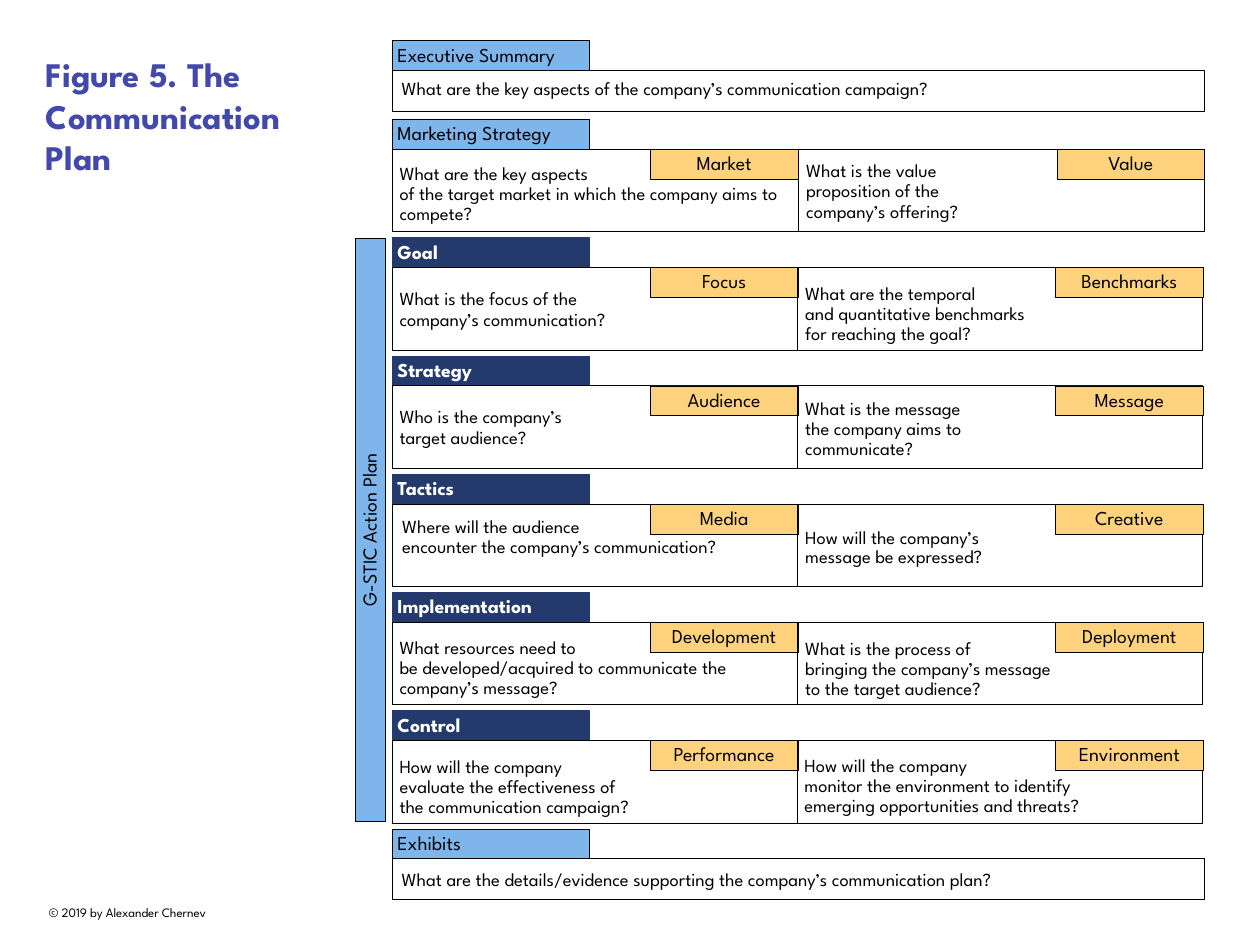
import pptx
import pptx.util
import pptx.dml.color
import pptx.enum.shapes
import pptx.enum.text

Pt = pptx.util.Pt
RGBColor = pptx.dml.color.RGBColor
ALIGN = pptx.enum.text.PP_ALIGN
ANCHOR = pptx.enum.text.MSO_ANCHOR
RECT = pptx.enum.shapes.MSO_SHAPE.RECTANGLE
LINE = pptx.enum.shapes.MSO_CONNECTOR.STRAIGHT

BLACK = RGBColor(0x00, 0x00, 0x00)
WHITE = RGBColor(0xFF, 0xFF, 0xFF)
SKY = RGBColor(0x7E, 0xB5, 0xEA)
NAVY = RGBColor(0x25, 0x3A, 0x6C)
GOLD = RGBColor(0xFF, 0xD3, 0x7D)
VIOLET = RGBColor(0x43, 0x49, 0xAA)

LEFT, MID = 319, 648.2
WIDE, HALF = 659.5, 329.2
HEAD_W, HEAD_H = 160, 24.2
TAG_W = 120
ROW_H, STEP = 67, 96.1
TEXT_W, TEXT_H = 307.5, 58.3

deck = pptx.Presentation()
deck.slide_width, deck.slide_height = Pt(1024), Pt(768)
slide = deck.slides.add_slide(deck.slide_layouts[6])


def write(shape, text, size, color=BLACK, bold=False, align=ALIGN.LEFT,
          anchor=ANCHOR.MIDDLE, inset=0, side=0, space=0.9, before=0):
    frame = shape.text_frame
    frame.word_wrap = True
    frame.vertical_anchor = anchor
    frame.margin_top = frame.margin_bottom = frame.margin_right = Pt(inset)
    frame.margin_left = Pt(inset + side)
    for i, part in enumerate(text.split("\n")):
        para = frame.add_paragraph() if i else frame.paragraphs[0]
        para.alignment = align
        para.line_spacing = space
        para.space_before = Pt(before)
        for j, words in enumerate(part.split("\v")):
            if j:
                para.add_line_break()
            run = para.add_run()
            run.text = words
            run.font.name = "League Spartan"
            run.font.size = Pt(size)
            run.font.bold = bold
            run.font.color.rgb = color


def add_box(x, y, w, h, fill=None, edge=BLACK, weight=0.75):
    box = slide.shapes.add_shape(RECT, Pt(x), Pt(y), Pt(w), Pt(h))
    box.shadow.inherit = False
    if fill is None:
        box.fill.background()
    else:
        box.fill.solid()
        box.fill.fore_color.rgb = fill
    box.line.color.rgb = edge
    box.line.width = Pt(weight)
    return box


title = slide.shapes.add_textbox(Pt(32.4), Pt(33.1), Pt(235.4), Pt(116))
write(title, "Figure 5. The Communication Plan", 28, VIOLET, True,
      anchor=ANCHOR.BOTTOM, inset=5, space=1)

credit = slide.shapes.add_textbox(Pt(19.4), Pt(731.5), Pt(168.5), Pt(20))
write(credit, "© 2019 by Alexander Chernev", 10.5, align=ALIGN.CENTER,
      anchor=ANCHOR.TOP, inset=3.6, space=1)
credit.text_frame.word_wrap = False

TOP, CORE = ANCHOR.TOP, ANCHOR.MIDDLE
rows = [
    ("Marketing Strategy",
     ("Market", 324.7, 12.5, TOP, "What are the key aspects\vof the target market in which the company aims to compete?"),
     ("Value", 655.2, 9.6, TOP, "What is the value\vproposition of the\ncompany’s offering?")),
    ("Goal",
     ("Focus", 324.7, 18, TOP, "What is the focus of the\ncompany’s communication?"),
     ("Benchmarks", 654.4, 13.6, TOP, "What are the temporal\vand quantitative benchmarks\vfor reaching the goal?")),
    ("Strategy",
     ("Audience", 324.7, 17.6, TOP, "Who is the company’s\ntarget audience?"),
     ("Message", 654.4, 11.1, TOP, "What is the message\vthe company aims to\vcommunicate?")),
    ("Tactics",
     ("Media", 326.9, 10.8, TOP, "Where will the audience\vencounter the company’s communication?"),
     ("Creative", 654.4, 6.5, CORE, "How will the company’s\vmessage be expressed?")),
    ("Implementation",
     ("Development", 324.7, 13.3, TOP, "What resources need to\vbe developed/acquired to communicate the company’s message?"),
     ("Deployment", 654.4, 9, CORE, "What is the process of\vbringing the company’s message\vto the target audience?")),
    ("Control",
     ("Performance", 324.7, 8.7, CORE, "How will the company\vevaluate the effectiveness of\vthe communication campaign?"),
     ("Environment", 653.8, 13, TOP, "How will the company\vmonitor the environment to identify\vemerging opportunities and threats?")),
]

for i, (name, *cells) in enumerate(rows):
    y = 97.2 + i * STEP
    plan = i > 0
    fill = NAVY if plan else SKY
    head = add_box(LEFT, y, HEAD_W, HEAD_H, fill, NAVY if plan else BLACK)
    write(head, name, 16, WHITE if plan else BLACK, plan, side=4)
    y += HEAD_H
    if not plan:
        add_box(LEFT, y, WIDE, ROW_H)
        rule = slide.shapes.add_connector(LINE, Pt(MID + 0.5), Pt(y + ROW_H), Pt(MID + 0.5), Pt(y))
        rule.line.color.rgb = BLACK
        rule.line.width = Pt(0.75)
        rule._element.spPr.append(pptx.oxml.parse_xml(
            '<a:effectLst xmlns:a="http://schemas.openxmlformats.org/drawingml/2006/main"/>'))
    for x, tag_x, (label, text_x, drop, anchor, text) in zip((LEFT, MID), (528.5, 857.8), cells):
        if plan:
            add_box(x, y, HALF, ROW_H)
        tag = add_box(tag_x if plan or x == LEFT else 859, y, TAG_W, HEAD_H, GOLD, weight=0.5)
        write(tag, label, 16, align=ALIGN.CENTER)
        note = slide.shapes.add_textbox(Pt(text_x), Pt(y + drop), Pt(TEXT_W), Pt(TEXT_H))
        write(note, text, 15, anchor=anchor, before=1)

for name, y, text_y, text in (
    ("Executive Summary", 33.3, 55.6, "What are the key aspects of the company’s communication campaign?"),
    ("Exhibits", 673.9, 698.4, "What are the details/evidence supporting the company’s communication plan?"),
):
    write(add_box(LEFT, y, HEAD_W, HEAD_H, SKY), name, 16, side=4)
    add_box(LEFT, y + HEAD_H, WIDE, 33)
    note = slide.shapes.add_textbox(Pt(326.5), Pt(text_y), Pt(649.4), Pt(33.8))
    write(note, text, 15, before=1)

side_bar = add_box(64.1, 418.3, 473.8, 24.5, SKY)
side_bar.rotation = 270
write(side_bar, "G-STIC Action Plan", 16, align=ALIGN.CENTER)

deck.save("out.pptx")
